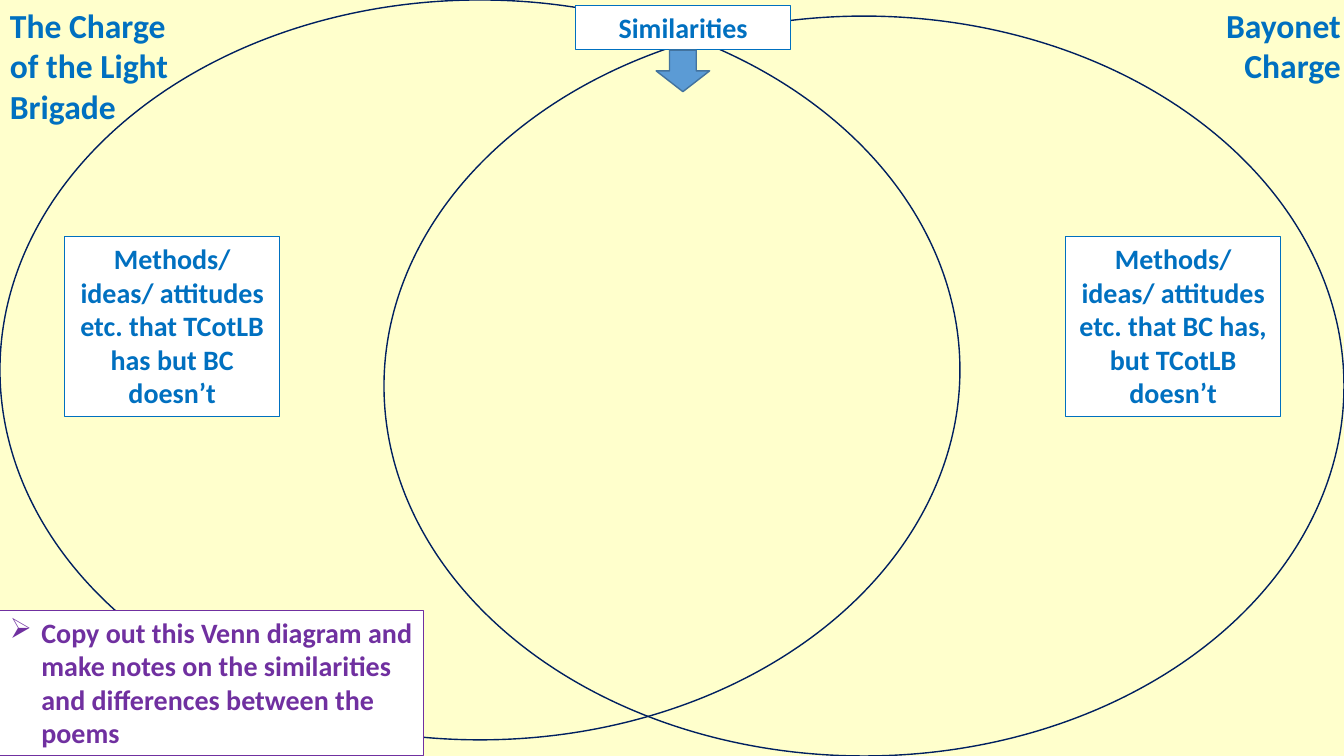
from lxml import etree
from pptx import Presentation
from pptx.dml.color import RGBColor
from pptx.enum.shapes import MSO_SHAPE
from pptx.enum.text import MSO_ANCHOR, MSO_AUTO_SIZE, PP_ALIGN
from pptx.oxml.ns import qn
from pptx.util import Pt

ELLIPSE, RECT, DOWN_ARROW = MSO_SHAPE.OVAL, MSO_SHAPE.RECTANGLE, MSO_SHAPE.DOWN_ARROW
LEFT, CENTER, RIGHT = PP_ALIGN.LEFT, PP_ALIGN.CENTER, PP_ALIGN.RIGHT
TOP, FIT_SHAPE = MSO_ANCHOR.TOP, MSO_AUTO_SIZE.SHAPE_TO_FIT_TEXT

CREAM = RGBColor(0xFF, 0xFF, 0xCC)
WHITE = RGBColor(0xFF, 0xFF, 0xFF)
NAVY = RGBColor(0x00, 0x20, 0x60)
BLUE = RGBColor(0x00, 0x70, 0xC0)
PURPLE = RGBColor(0x70, 0x30, 0xA0)
ARROW_FILL = RGBColor(0x5B, 0x9B, 0xD5)
ARROW_LINE = RGBColor(0x43, 0x73, 0x9E)


class VennSlide:
    """Holds the style and the slide, and draws the parts of a Venn diagram."""

    font = "Calibri"
    label_size = 20
    heading_size = 24
    bullet_indent = 22.5

    def __init__(self, slide):
        self.slide = slide
        slide.background.fill.solid()
        slide.background.fill.fore_color.rgb = CREAM

    def outline(self, kind, box, line, width=1, fill=None):
        shape = self.slide.shapes.add_shape(kind, *map(Pt, box))
        shape.shadow.inherit = False
        if fill is None:
            shape.fill.background()
        else:
            shape.fill.solid()
            shape.fill.fore_color.rgb = fill
        shape.line.color.rgb = line
        shape.line.width = Pt(width)
        return shape

    def add_text(self, shape, text, size, color, align):
        frame = shape.text_frame
        frame.word_wrap = True
        frame.auto_size = FIT_SHAPE
        frame.vertical_anchor = TOP
        paragraph = frame.paragraphs[0]
        paragraph.alignment = align
        run = paragraph.add_run()
        run.text = text
        run.font.name = self.font
        run.font.size = Pt(size)
        run.font.bold = True
        run.font.color.rgb = color
        return paragraph

    def heading(self, box, text, align):
        self.add_text(self.slide.shapes.add_textbox(*map(Pt, box)),
                      text, self.heading_size, BLUE, align)

    def label(self, box, text, color=BLUE, align=CENTER):
        panel = self.outline(RECT, box, color, 0.75, WHITE)
        return self.add_text(panel, text, self.label_size, color, align)

    def task(self, box, text):
        properties = self.label(box, text, PURPLE, LEFT)._p.get_or_add_pPr()
        properties.set("marL", str(Pt(self.bullet_indent)))
        properties.set("indent", str(-Pt(self.bullet_indent)))
        etree.SubElement(properties, qn("a:buChar")).set("char", "➢")


def main():
    deck = Presentation()
    deck.slide_width, deck.slide_height = Pt(960), Pt(540)
    venn = VennSlide(deck.slides.add_slide(deck.slide_layouts[6]))

    for left, top in ((0, 0), (274.3, 11.5)):
        venn.outline(ELLIPSE, (left, top, 685.7, 528.5), NAVY)

    venn.heading((0, 0, 147.6, 94.4), "The Charge of the Light Brigade", LEFT)
    venn.heading((817.2, 0, 147.6, 65.4), "Bayonet Charge", RIGHT)

    label_width = 154
    venn.label((411, 4.2, label_width, 31.5), "Similarities")
    venn.outline(DOWN_ARROW, (468.7, 35.8, 38.2, 29.7), ARROW_LINE, fill=ARROW_FILL)

    differences = (
        (46, "Methods/ ideas/ attitudes etc. that TCotLB has but BC doesn’t"),
        (761, "Methods/ ideas/ attitudes etc. that BC has, but TCotLB doesn’t"),
    )
    for left, text in differences:
        venn.label((left, 169, label_width, 128.4), text)

    venn.task((0, 435.8, 302.5, 104.2),
              "Copy out this Venn diagram and make notes on the similarities "
              "and differences between the poems")
    deck.save("out.pptx")


if __name__ == "__main__":
    main()
